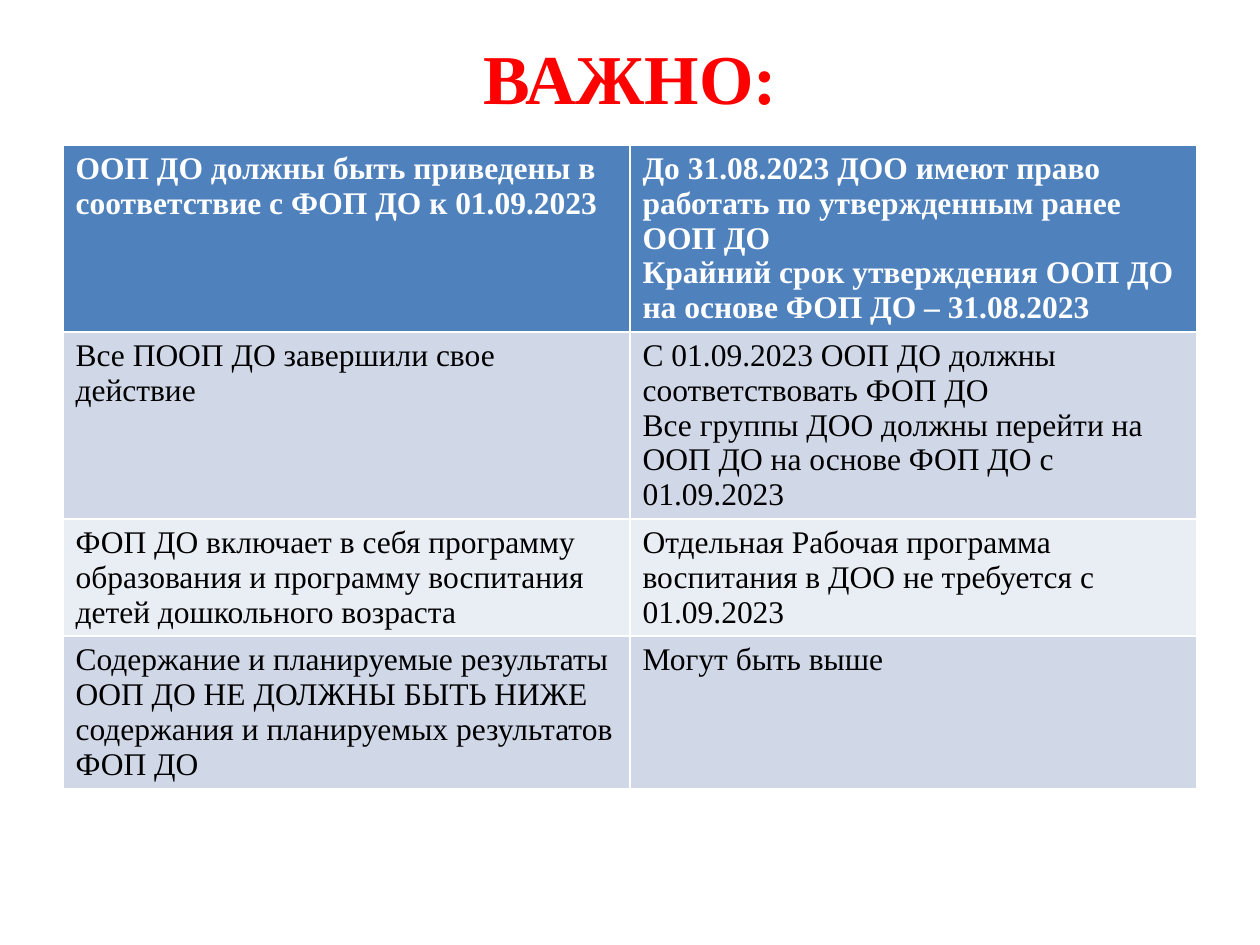
from dataclasses import dataclass

from pptx import Presentation
from pptx.dml.color import RGBColor
from pptx.enum import text as t
from pptx.util import Inches, Pt


@dataclass(frozen=True)
class Theme:
    font: str = "Times New Roman"
    title: int = 40
    body: int = 18
    red: str = "FF0000"
    white: str = "FFFFFF"
    black: str = "000000"
    head: str = "4F81BD"
    bands: tuple[str, str] = ("D0D8E8", "E9EDF4")


@dataclass(frozen=True)
class Row:
    left: str
    right: str


THEME = Theme()
ROWS = [
    Row("ООП ДО должны быть приведены в соответствие с ФОП ДО к 01.09.2023",
        "До 31.08.2023 ДОО имеют право работать по утвержденным ранее ООП ДО\n"
        "Крайний срок утверждения ООП ДО на основе ФОП ДО – 31.08.2023"),
    Row("Все ПООП ДО завершили свое действие",
        "С 01.09.2023 ООП ДО должны соответствовать ФОП ДО\n"
        "Все группы ДОО должны перейти на ООП ДО на основе ФОП ДО с 01.09.2023"),
    Row("ФОП ДО включает в себя программу образования и программу воспитания "
        "детей дошкольного возраста",
        "Отдельная Рабочая программа воспитания в ДОО не требуется с 01.09.2023"),
    Row("Содержание и планируемые результаты ООП ДО НЕ ДОЛЖНЫ БЫТЬ НИЖЕ "
        "содержания и планируемых результатов ФОП ДО",
        "Могут быть выше"),
]


def write(frame, words: str, size: int, color: str, bold: bool) -> None:
    frame.text = words
    form = {"name": THEME.font, "size": Pt(size), "bold": bold}
    for para in frame.paragraphs:
        for run in para.runs:
            for key, val in form.items():
                setattr(run.font, key, val)
            run.font.color.rgb = RGBColor.from_string(color)


def add_title(slide, words: str) -> None:
    title = slide.shapes.title
    place = {"left": 0.5, "top": 0.3, "width": 9, "height": 0.61}
    for key, val in place.items():
        setattr(title, key, Inches(val))
    frame = title.text_frame
    write(frame, words, THEME.title, THEME.red, True)
    form = {"auto_size": t.MSO_AUTO_SIZE.NONE, "word_wrap": True,
            "vertical_anchor": t.MSO_ANCHOR.MIDDLE}
    for key, val in form.items():
        setattr(frame, key, val)
    frame.paragraphs[0].alignment = t.PP_ALIGN.CENTER


def add_grid(slide, rows: list[Row]) -> None:
    """Add the table with low rows, which grow to fit their text."""
    shape = slide.shapes.add_table(len(rows), 2, Inches(0.5), Inches(1.15),
                                   Inches(9), Inches(0.41 * len(rows)))
    shape.height = Inches(5.5)
    for i, row in enumerate(rows):
        head = i == 0
        fill = THEME.head if head else THEME.bands[(i - 1) % 2]
        color = THEME.white if head else THEME.black
        for j, words in enumerate((row.left, row.right)):
            cell = shape.table.cell(i, j)
            cell.fill.solid()
            cell.fill.fore_color.rgb = RGBColor.from_string(fill)
            write(cell.text_frame, words, THEME.body, color, head)


def main() -> None:
    deck = Presentation()
    deck.slide_width, deck.slide_height = Inches(10), Inches(7.5)
    slide = deck.slides.add_slide(deck.slide_layouts[5])
    add_title(slide, "ВАЖНО:")
    add_grid(slide, ROWS)
    deck.save("out.pptx")


if __name__ == "__main__":
    main()
